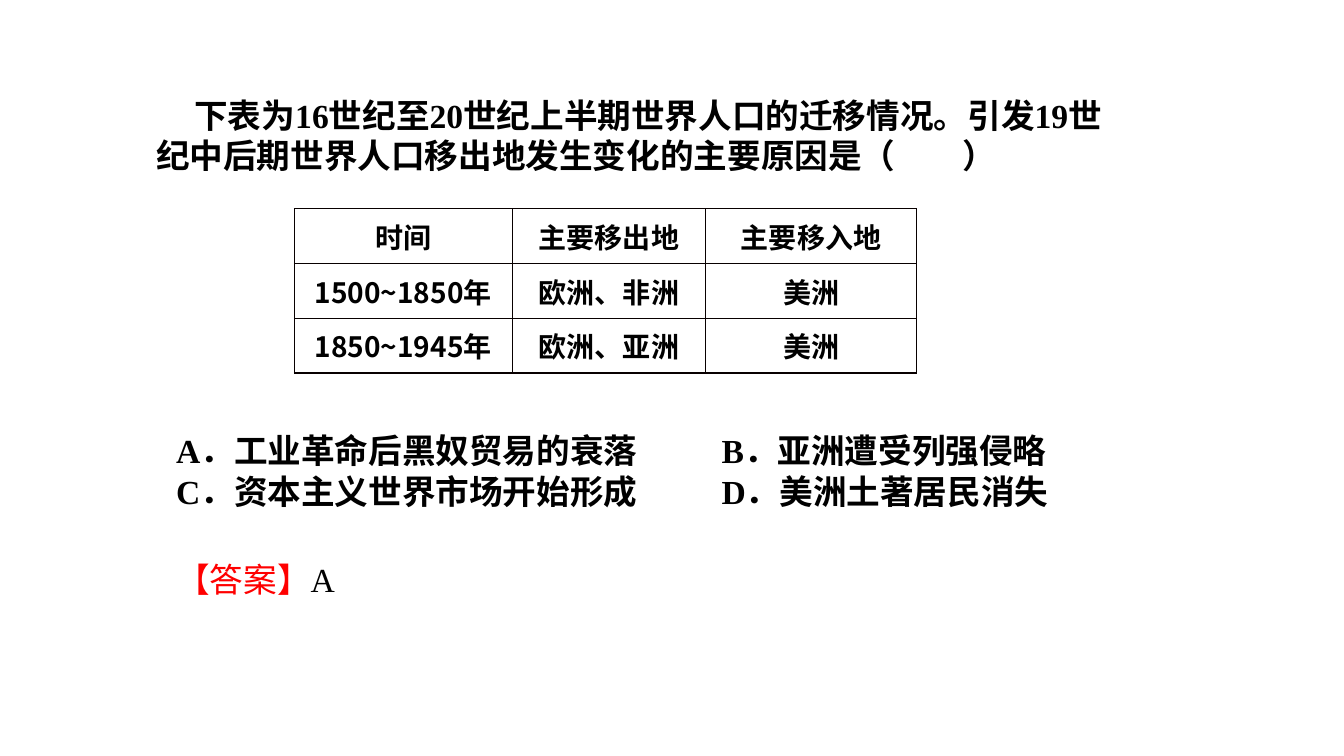
from lxml import etree
from pptx import Presentation
from pptx.dml.color import RGBColor
from pptx.enum import text as t
from pptx.oxml import ns
from pptx.util import Inches, Pt

BLACK = RGBColor(0, 0, 0)
RED = RGBColor(255, 0, 0)
EDGE = RGBColor(8, 0, 0)
SANS = "Noto Sans CJK SC"
ROMAN = "Times New Roman"

ROWS = [
    ("时间", "主要移出地", "主要移入地"),
    ("1500~1850年", "欧洲、非洲", "美洲"),
    ("1850~1945年", "欧洲、亚洲", "美洲"),
]
COLS = (2.16, 1.92, 2.09)


def add_run(para, words, size=24, font=ROMAN, color=BLACK, bold=True):
    run = para.add_run()
    run.text = words
    run.font.size = Pt(size)
    run.font.bold = bold
    run.font.color.rgb = color
    run.font.name = font
    # East Asian glyphs take their own typeface
    etree.SubElement(run.font._element, ns.qn("a:ea"), typeface=SANS)


def add_box(slide, left, top, width, height):
    frame = slide.shapes.add_textbox(
        Inches(left), Inches(top), Inches(width), Inches(height)).text_frame
    frame.word_wrap = True
    return frame


def set_indent(para, margin, first):
    props = para._p.get_or_add_pPr()
    props.set("marL", str(Inches(margin)))
    props.set("indent", str(Inches(first)))


def set_tab(para, pos):
    tabs = etree.SubElement(para._p.get_or_add_pPr(), ns.qn("a:tabLst"))
    etree.SubElement(tabs, ns.qn("a:tab"), pos=str(Inches(pos)), algn="l")


def set_edges(cell):
    props = cell._tc.get_or_add_tcPr()
    for side in ("lnL", "lnR", "lnT", "lnB"):
        line = etree.SubElement(props, ns.qn("a:" + side), w=str(Pt(1)))
        fill = etree.SubElement(line, ns.qn("a:solidFill"))
        etree.SubElement(fill, ns.qn("a:srgbClr"), val=str(EDGE))


def add_grid(slide):
    grid = slide.shapes.add_table(
        len(ROWS), len(COLS), Inches(2.92), Inches(2.07),
        Inches(sum(COLS)), Inches(1.63)).table
    grid.first_row = grid.horz_banding = False
    for col, width in zip(grid.columns, COLS):
        col.width = Inches(width)
    for r, row in enumerate(ROWS):
        for c, words in enumerate(row):
            cell = grid.cell(r, c)
            cell.margin_left = cell.margin_right = Inches(0.08)
            cell.margin_top = cell.margin_bottom = 0
            cell.vertical_anchor = t.MSO_ANCHOR.MIDDLE
            set_edges(cell)
            cell.fill.background()
            para = cell.text_frame.paragraphs[0]
            para.alignment = t.PP_ALIGN.CENTER
            add_run(para, words, size=20, font=SANS)


def main():
    prs = Presentation()
    prs.slide_width, prs.slide_height = Inches(13.33), Inches(7.5)
    slide = prs.slides.add_slide(prs.slide_layouts[6])

    # Question
    para = add_box(slide, 1.23, 0.89, 10.1, 0.95).paragraphs[0]
    set_indent(para, 0.22, 0.38)
    parts = ("下表为", "16", "世纪至", "20",
             "世纪上半期世界人口的迁移情况。引发", "19",
             "世纪中后期世界人口移出地发生变化的主要原因是（　　）")
    for words in parts:
        add_run(para, words, font=ROMAN if words.isdigit() else "Arial")

    # Migration table
    add_grid(slide)

    # Choices, two to a line
    frame = add_box(slide, 1.65, 4.22, 10.24, 0.95)
    pairs = (("A．工业革命后黑奴贸易的衰落", "B．亚洲遭受列强侵略"),
             ("C．资本主义世界市场开始形成", "D．美洲土著居民消失"))
    for i, pair in enumerate(pairs):
        para = frame.add_paragraph() if i else frame.paragraphs[0]
        set_tab(para, 5.41)
        add_run(para, "\t".join(pair))

    # Answer
    para = add_box(slide, 1.65, 5.5, 6.67, 0.5).paragraphs[0]
    add_run(para, "【答案】", color=RED, bold=False)
    add_run(para, "A", bold=False)

    prs.save("out.pptx")


if __name__ == "__main__":
    main()
